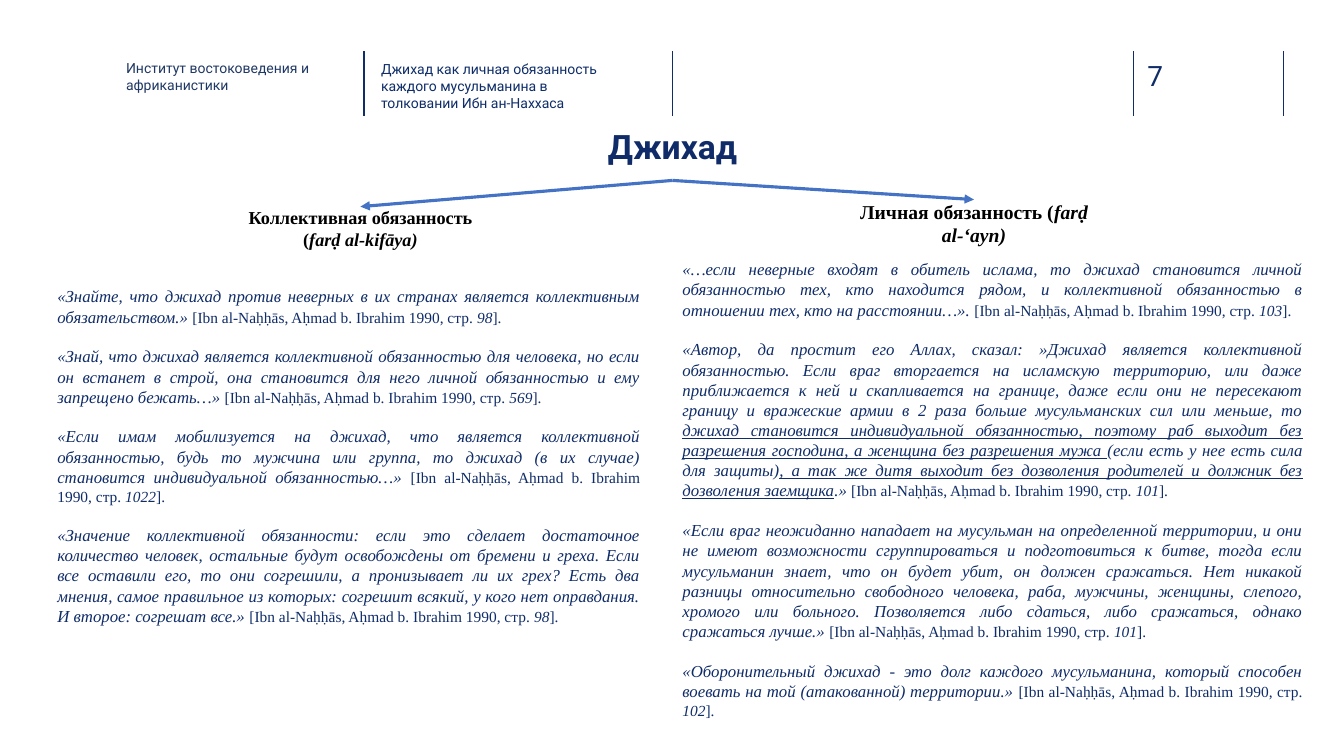
from typing import NamedTuple

import pptx
import pptx.dml.color
import pptx.enum.shapes
import pptx.enum.text
import pptx.util
from lxml import etree

PX = 9144  # EMU in one px, 100 px to the inch
NAVY, INK, BLUE = "0F2C68", "102D69", "4472C4"
SANS, SERIF = "Roboto", "Times New Roman"
ALIGN = pptx.enum.text.PP_ALIGN
FIT = pptx.enum.text.MSO_AUTO_SIZE
NS = "{http://schemas.openxmlformats.org/drawingml/2006/main}"
CITE = "[Ibn al-Naḥḥās, Aḥmad b. Ibrahim 1990, стр. "


class Box(NamedTuple):
    left: int
    top: int
    width: int
    height: int


class Label(NamedTuple):
    box: Box
    text: str
    size: int
    color: str


class Head(NamedTuple):
    box: Box
    text: str
    term: str
    size: int


class Quote(NamedTuple):
    spans: tuple[str, ...]  # plain and underlined spans in turn
    page: str


class Column(NamedTuple):
    box: Box
    quotes: tuple[Quote, ...]


RULES = (361, 667, 1124, 1273)
TITLE = Box(575, 125, 184, 54)
LABELS = (
    Label(Box(125, 59, 208, 45), "Институт востоковедения и африканистики", 10, "203864"),
    Label(Box(378, 60, 226, 45),
          "Джихад как личная обязанность каждого мусульманина в толковании Ибн ан-Наххаса",
          10, "0E2D69"),
    Label(Box(1138, 58, 73, 34), "7", 20, INK),
)
HEADS = (
    Head(Box(241, 205, 233, 64), "Коллективная обязанность (", "farḍ al-kifāya)", 13),
    Head(Box(840, 198, 252, 58), "Личная обязанность (", "farḍ al-‘ayn)", 14),
)
COLUMNS = (
    Column(Box(47, 279, 598, 353), (
        Quote(("«Знайте, что джихад против неверных в их странах является коллективным "
               "обязательством.» ",), "98"),
        Quote(("«Знай, что джихад является коллективной обязанностью для человека, но если "
               "он встанет в строй, она становится для него личной обязанностью и ему "
               "запрещено бежать…» ",), "569"),
        Quote(("«Если имам мобилизуется на джихад, что является коллективной обязанностью, "
               "будь то мужчина или группа, то джихад (в их случае) становится "
               "индивидуальной обязанностью…» ",), "1022"),
        Quote(("«Значение коллективной обязанности: если это сделает достаточное количество "
               "человек, остальные будут освобождены от бремени и греха. Если все оставили "
               "его, то они согрешили, а пронизывает ли их грех? Есть два мнения, самое "
               "правильное из которых: согрешит всякий, у кого нет оправдания. "
               "И второе: согрешат все.» ",), "98"),
    )),
    Column(Box(667, 252, 635, 475), (
        Quote(("«…если неверные входят в обитель ислама, то джихад становится личной "
               "обязанностью тех, кто находится рядом, и коллективной обязанностью в "
               "отношении тех, кто на расстоянии…». ",), "103"),
        Quote(("«Автор, да простит его Аллах, сказал: »Джихад является коллективной "
               "обязанностью. Если враг вторгается на исламскую территорию, или даже "
               "приближается к ней и скапливается на границе, даже если они не пересекают "
               "границу и вражеские армии в 2 раза больше мусульманских сил или меньше, то ",
               "джихад становится индивидуальной обязанностью, поэтому раб выходит без "
               "разрешения господина, а женщина без разрешения мужа ",
               "(если есть у нее есть сила для защиты)",
               ", а так же дитя выходит без дозволения родителей и должник без "
               "дозволения заемщика",
               ".» "), "101"),
        Quote(("«Если враг неожиданно нападает на мусульман на определенной территории, и "
               "они не имеют возможности сгруппироваться и подготовиться к битве, тогда если "
               "мусульманин знает, что он будет убит, он должен сражаться. Нет никакой "
               "разницы относительно свободного человека, раба, мужчины, женщины, слепого, "
               "хромого или больного. Позволяется либо сдаться, либо сражаться, однако "
               "сражаться лучше.» ",), "101"),
        Quote(("«Оборонительный джихад - это долг каждого мусульманина, который способен "
               "воевать на той (атакованной) территории.» ",), "102"),
    )),
)


def rgb(code: str) -> pptx.dml.color.RGBColor:
    return pptx.dml.color.RGBColor.from_string(code)


def write(par, text: str, *, font: str = SERIF, size: int = 12, color: str = NAVY,
          bold: bool = False, slant: bool = False, under: bool = False) -> None:
    run = par.add_run()
    run.text = text
    face = run.font
    face.name, face.size = font, pptx.util.Pt(size)
    face.color.rgb = rgb(color)
    face.bold, face.italic, face.underline = bold, slant, under


def frame(shape, pad: tuple[int, int, int, int] = (0, 0, 0, 0), fit=FIT.NONE):
    text = shape.text_frame
    text.word_wrap, text.auto_size = True, fit
    text.vertical_anchor = pptx.enum.text.MSO_ANCHOR.TOP
    (text.margin_left, text.margin_top,
     text.margin_right, text.margin_bottom) = (side * PX for side in pad)
    return text


def place(slide, box: Box):
    return slide.shapes.add_textbox(*(side * PX for side in box))


def line(slide, ends: tuple[int, int, int, int], color: str, width: float):
    link = slide.shapes.add_connector(
        pptx.enum.shapes.MSO_CONNECTOR.STRAIGHT, *(end * PX for end in ends))
    link.line.color.rgb = rgb(color)
    link.line.width = pptx.util.Pt(width)
    etree.SubElement(link._element.spPr, NS + "effectLst")
    return link


def arrow(slide, start, goal) -> None:
    link = line(slide, (0, 0, 0, 0), BLUE, 2.25)
    link.begin_connect(start, 2)
    link.end_connect(goal, 0)
    etree.SubElement(link._element.spPr.find(NS + "ln"), NS + "tailEnd", type="triangle")


def name(slide):
    title = slide.shapes.title
    title.left, title.top, title.width, title.height = (side * PX for side in TITLE)
    par = frame(title).paragraphs[0]
    par.alignment = ALIGN.CENTER
    write(par, "Джихад", font=SANS, size=24, bold=True)
    return title


def head(slide, item: Head):
    shape = place(slide, item.box)
    par = frame(shape, (0, 0, 0, 5)).paragraphs[0]
    par.alignment = ALIGN.CENTER
    write(par, item.text, size=item.size, color="000000", bold=True)
    write(par, item.term, size=item.size, color="000000", bold=True, slant=True)
    return shape


def column(slide, item: Column) -> None:
    text = frame(place(slide, item.box), (10, 5, 10, 5), FIT.SHAPE_TO_FIT_TEXT)
    for row, quote in enumerate(item.quotes):
        par = text.add_paragraph() if row else text.paragraphs[0]
        par.alignment = ALIGN.JUSTIFY
        if row:
            par.space_before = pptx.util.Pt(14)
        for turn, span in enumerate(quote.spans):
            write(par, span, slant=True, under=turn % 2 == 1)
        write(par, CITE, size=11)
        write(par, quote.page, size=11, slant=True)
        write(par, "].", size=11)


def main() -> None:
    deck = pptx.Presentation()
    deck.slide_width, deck.slide_height = 1333 * PX, 750 * PX
    slide = deck.slides.add_slide(deck.slide_layouts.get_by_name("Title Only"))

    # Header strip
    for left in RULES:
        line(slide, (left, 51, left, 115), INK, 1)
    for item in LABELS:
        par = frame(place(slide, item.box)).paragraphs[0]
        write(par, item.text, font=SANS, size=item.size, color=item.color)

    # Title branching into two headings
    title = name(slide)
    for item in HEADS:
        arrow(slide, title, head(slide, item))

    # Quotations
    for item in COLUMNS:
        column(slide, item)

    deck.save("out.pptx")


if __name__ == "__main__":
    main()
